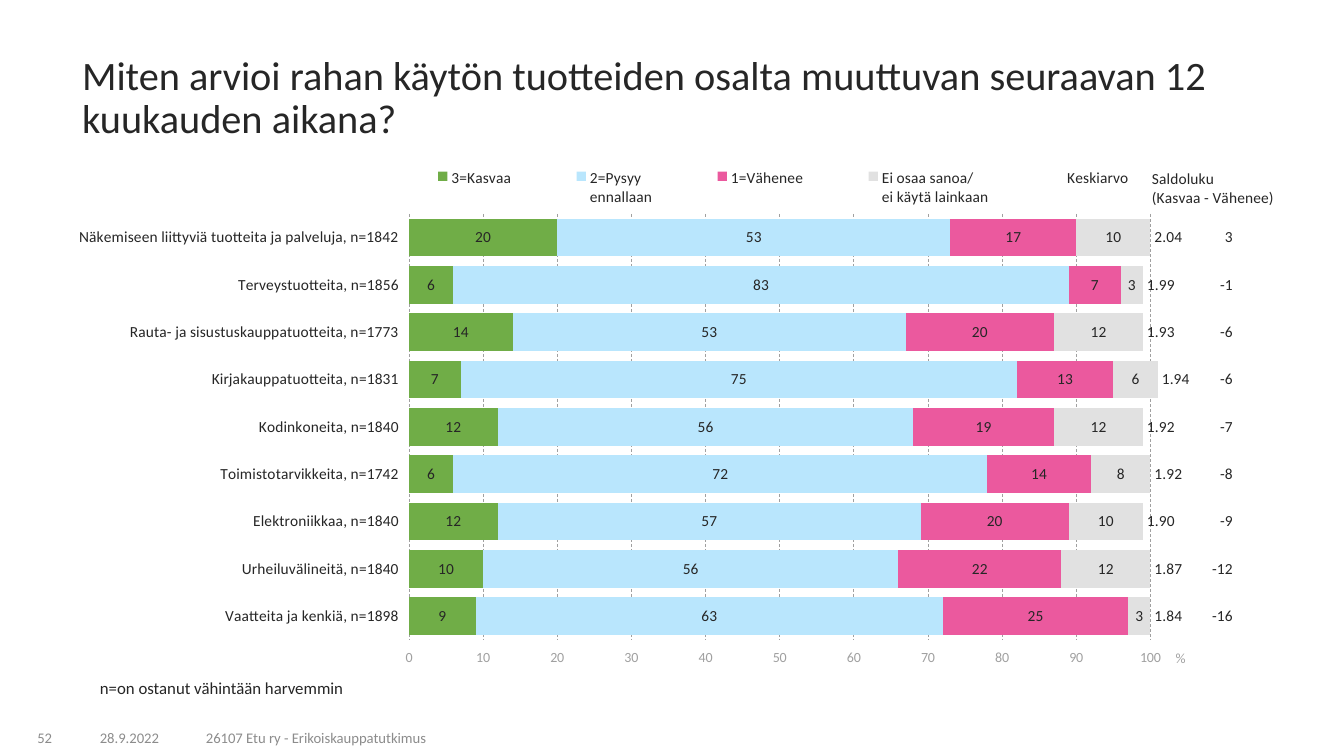
from lxml import etree
from pptx import Presentation
from pptx.chart.data import CategoryChartData
from pptx.dml.color import RGBColor
from pptx.enum.chart import (XL_AXIS_CROSSES, XL_CHART_TYPE, XL_LABEL_POSITION,
                             XL_LEGEND_POSITION, XL_TICK_LABEL_POSITION, XL_TICK_MARK)
from pptx.enum.dml import MSO_LINE
from pptx.enum.text import MSO_ANCHOR, PP_ALIGN
from pptx.oxml.ns import qn
from pptx.util import Emu, Pt

INK = RGBColor(0x26, 0x26, 0x26)
MUTED = RGBColor(0x8C, 0x8C, 0x8C)
AXIS = RGBColor(0xA0, 0xA0, 0xA0)
GREEN = RGBColor(0x70, 0xAD, 0x47)
BLUE = RGBColor(0xB9, 0xE6, 0xFD)
PINK = RGBColor(0xEB, 0x59, 0x9E)
GREY = RGBColor(0xE1, 0xE1, 0xE1)
FONT = "Calibri"

TITLE = "Miten arvioi rahan käytön tuotteiden osalta muuttuvan seuraavan 12 kuukauden aikana?"
PRODUCTS = [
    "Näkemiseen liittyviä tuotteita ja palveluja, n=1842",
    "Terveystuotteita, n=1856",
    "Rauta- ja sisustuskauppatuotteita, n=1773",
    "Kirjakauppatuotteita, n=1831",
    "Kodinkoneita, n=1840",
    "Toimistotarvikkeita, n=1742",
    "Elektroniikkaa, n=1840",
    "Urheiluvälineitä, n=1840",
    "Vaatteita ja kenkiä, n=1898",
]
SPENDING = [
    ("3=Kasvaa", (20, 6, 14, 7, 12, 6, 12, 10, 9), GREEN),
    ("2=Pysyy \nennallaan", (53, 83, 53, 75, 56, 72, 57, 56, 63), BLUE),
    ("1=Vähenee", (17, 7, 20, 13, 19, 14, 20, 22, 25), PINK),
    ("Ei osaa sanoa/\nei käytä lainkaan", (10, 3, 12, 6, 12, 8, 10, 12, 3), GREY),
    ("Keskiarvo", (2.04, 1.99, 1.93, 1.94, 1.92, 1.92, 1.90, 1.87, 1.84), None),
]
BALANCE = [("Saldoluku \n(Kasvaa - Vähenee)", (3, -1, -6, -6, -7, -8, -9, -12, -16), None)]
SPENDING_BOX = (72, 147, 1158, 528)
BALANCE_BOX = (1106, 147, 170, 528)
TEXTS = [
    ("28.9.2022", (67, 722, 125, 30), 10.5, MUTED, PP_ALIGN.CENTER, MSO_ANCHOR.BOTTOM),
    ("26107 Etu ry - Erikoiskauppatutkimus", (196, 722, 597, 30), 10.5, MUTED,
     PP_ALIGN.LEFT, MSO_ANCHOR.BOTTOM),
    ("52", (3, 722, 59, 30), 10.5, MUTED, PP_ALIGN.RIGHT, MSO_ANCHOR.BOTTOM),
    ("n=on ostanut vähintään harvemmin", (90, 675, 308, 28), 12, INK,
     PP_ALIGN.LEFT, MSO_ANCHOR.TOP),
]


def px(*lengths):
    return [Emu(round(n * 914400 / 100.8)) for n in lengths]


def style(font, size, color):
    font.name, font.size, font.bold = FONT, Pt(size), False
    font.color.rgb = color


def write(sp, text, size, color, align, anchor):
    tf = sp.text_frame
    tf.word_wrap = True
    tf.vertical_anchor = anchor
    tf.text = text
    p = tf.paragraphs[0]
    p.alignment, p.line_spacing = align, 0.9
    style(p.runs[0].font, size, color)


def place(parent, before, chart_box, part_box, inner=False):
    left, top, width, height = chart_box
    for old in parent.findall(qn("c:layout")):
        parent.remove(old)
    layout = etree.Element(qn("c:layout"))
    manual = etree.SubElement(layout, qn("c:manualLayout"))
    if inner:
        etree.SubElement(manual, qn("c:layoutTarget")).set("val", "inner")
    for key in "xy":
        etree.SubElement(manual, qn(f"c:{key}Mode")).set("val", "edge")
    for key, n, start, span in zip("xywh", part_box, (left, top, 0, 0),
                                   (width, height, width, height)):
        etree.SubElement(manual, qn(f"c:{key}")).set("val", str((n - start) / span))
    parent.find(qn(f"c:{before}")).addprevious(layout)


def add_bars(s, kind, box, cats, series, plot_box, legend_box):
    data = CategoryChartData()
    data.categories = cats
    for name, values, _ in series:
        data.add_series(name, values)
    chart = s.shapes.add_chart(kind, *px(*box), data).chart
    style(chart.font, 11, INK)
    chart.has_title = False
    chart.has_legend = True
    chart.legend.position = XL_LEGEND_POSITION.TOP
    chart.legend.include_in_layout = False
    style(chart.legend.font, 11, INK)
    plot = chart.plots[0]
    plot.vary_by_categories = False
    plot.gap_width = 25
    for ser, (name, _, color) in zip(plot.series, series):
        ser.invert_if_negative = False
        labels = ser.data_labels
        labels.show_value = True
        labels.number_format = "#,##0.00" if name == "Keskiarvo" else "#,##0"
        labels.number_format_is_linked = False
        style(labels.font, 11, INK)
        if color is None:
            ser.format.fill.background()
            labels.position = XL_LABEL_POSITION.INSIDE_BASE
        else:
            ser.format.fill.solid()
            ser.format.fill.fore_color.rgb = color
            labels.position = XL_LABEL_POSITION.CENTER
    chart.category_axis.reverse_order = True
    area = chart.element.find(".//" + qn("c:plotArea"))
    place(area, "barChart", box, plot_box, inner=True)
    place(chart.legend._element, "overlay", box, legend_box)
    return chart


def add_balance(s):
    chart = add_bars(s, XL_CHART_TYPE.BAR_CLUSTERED, BALANCE_BOX,
                     range(1, len(PRODUCTS) + 1), BALANCE,
                     (1190, 214, 47, 426), (1137, 162, 139, 53))
    axis = chart.value_axis
    axis.minimum_scale, axis.maximum_scale, axis.major_unit = -50, 50, 10
    axis.has_major_gridlines = False
    axis.reverse_order = True
    axis.crosses = XL_AXIS_CROSSES.MINIMUM
    axis.visible = chart.category_axis.visible = False


def add_spending(s):
    chart = add_bars(s, XL_CHART_TYPE.BAR_STACKED, SPENDING_BOX, PRODUCTS, SPENDING,
                     (409, 214, 749, 426), (378, 161, 811, 53))
    chart.plots[0].overlap = 100
    cat, val = chart.category_axis, chart.value_axis
    for axis, size, color in ((cat, 11, INK), (val, 10, AXIS)):
        axis.major_tick_mark = axis.minor_tick_mark = XL_TICK_MARK.NONE
        axis.format.line.fill.background()
        style(axis.tick_labels.font, size, color)
    cat.tick_label_position = XL_TICK_LABEL_POSITION.LOW
    val.tick_label_position = XL_TICK_LABEL_POSITION.HIGH
    val.minimum_scale, val.maximum_scale, val.major_unit = 0, 101.01, 10
    val.tick_labels.number_format = "General"
    val.tick_labels.number_format_is_linked = False
    grid = val.major_gridlines.format.line
    grid.color.rgb, grid.width, grid.dash_style = AXIS, Pt(0.5), MSO_LINE.DASH
    title = val.axis_title
    title.text_frame.text = "%"
    style(title.text_frame.paragraphs[0].runs[0].font, 10, AXIS)
    place(title._element, "overlay", SPENDING_BOX, (1173, 647))


def main():
    prs = Presentation()
    prs.slide_width, prs.slide_height = px(1344, 756)
    s = prs.slides.add_slide(prs.slide_layouts[5])
    title = s.shapes.title
    title.left, title.top, title.width, title.height = px(72, 65, 1217, 68)
    write(title, TITLE, 28.8, INK, PP_ALIGN.LEFT, MSO_ANCHOR.MIDDLE)
    add_balance(s)
    add_spending(s)
    for text, box, *look in TEXTS:
        write(s.shapes.add_textbox(*px(*box)), text, *look)
    prs.save("out.pptx")


if __name__ == "__main__":
    main()
